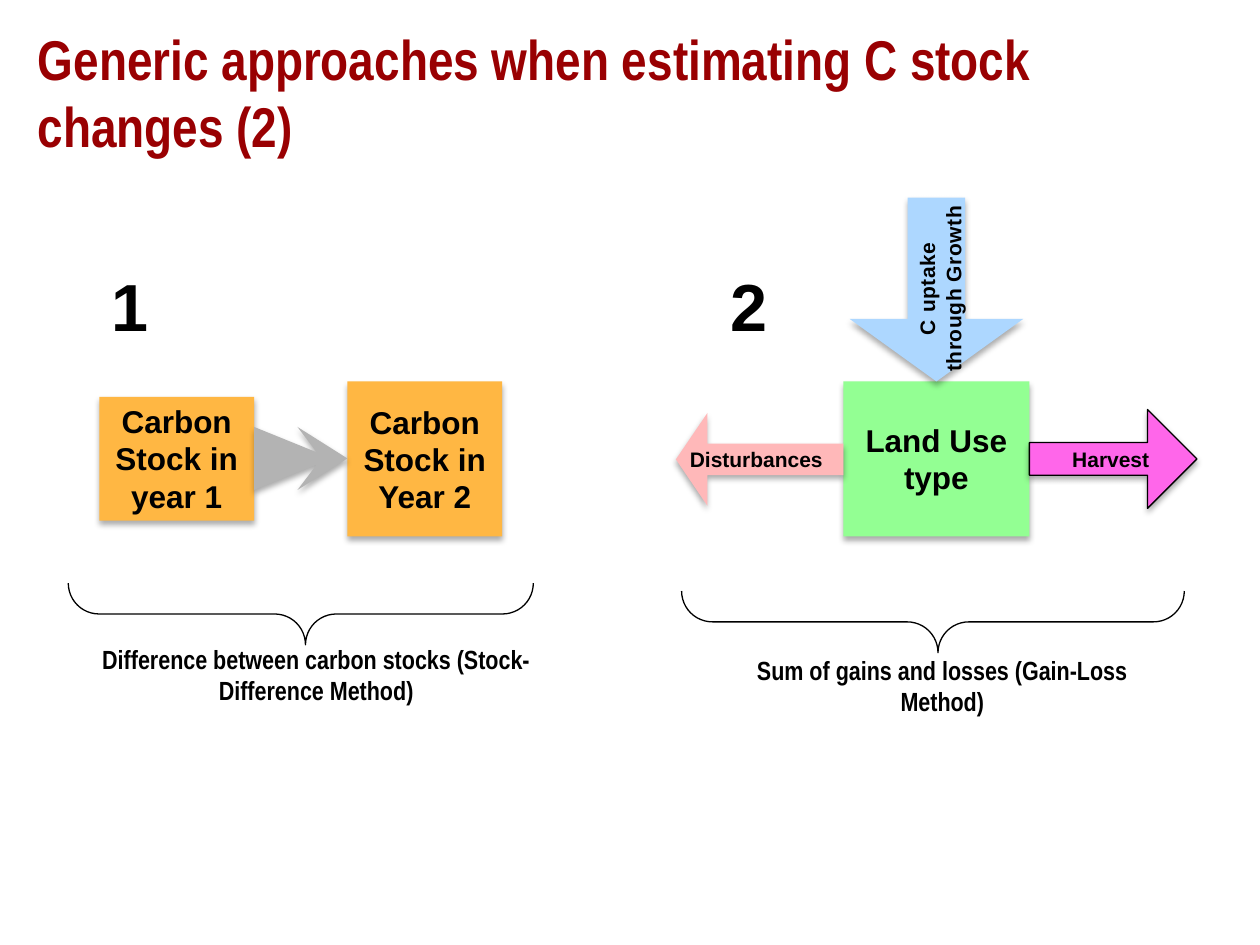
import pptx
import pptx.util
import pptx.dml.color
import pptx.enum.shapes
import pptx.enum.text
import pptx.oxml
import pptx.oxml.ns

Pt = pptx.util.Pt
RGB = pptx.dml.color.RGBColor.from_string
SHAPE = pptx.enum.shapes.MSO_SHAPE
ALIGN = pptx.enum.text.PP_ALIGN
ANCHOR = pptx.enum.text.MSO_ANCHOR
COLORS = {"title": "990002", "text": "000000", "stock": "FFB743", "change": "B3B3B3",
          "land": "93FF93", "uptake": "ADD7FF", "harvest": "FF66EA", "disturbance": "FFB8B9"}
SHADOW = (
    f'<a:effectLst {pptx.oxml.ns.nsdecls("a")}>'
    '<a:outerShdw blurRad="44450" dist="27940" dir="5400000" rotWithShape="0">'
    '<a:srgbClr val="000000"><a:alpha val="32000"/></a:srgbClr></a:outerShdw></a:effectLst>'
)


def write(sp, lines, size, align=ALIGN.CENTER, font="Arial", anchor=ANCHOR.MIDDLE, wrap=False):
    tf = sp.text_frame
    tf.word_wrap = wrap
    tf.vertical_anchor = anchor
    tf.margin_left = tf.margin_right = tf.margin_top = tf.margin_bottom = 0
    tf.text = "\n".join(lines)
    for p in tf.paragraphs:
        p.alignment = align
        p.font.name = font
        p.font.size = Pt(size)
        p.font.bold = True
        p.font.color.rgb = RGB(COLORS["text"])
    return tf


def paint(sp, color):
    sp.fill.solid()
    sp.fill.fore_color.rgb = RGB(COLORS[color])
    sp.line.fill.background()
    sp._element.spPr.append(pptx.oxml.parse_xml(SHADOW))


prs = pptx.Presentation()
prs.slide_width = Pt(720)
prs.slide_height = Pt(540)
s = prs.slides.add_slide(prs.slide_layouts[5])

title = s.shapes.title
title.left, title.top, title.width, title.height = Pt(14.4), Pt(13), Pt(692), Pt(79)
tf = title.text_frame
tf.text = "Generic approaches when estimating C stock changes (2)"
tf.auto_size = pptx.enum.text.MSO_AUTO_SIZE.NONE
tf.vertical_anchor = ANCHOR.MIDDLE
p = tf.paragraphs[0]
p.alignment = ALIGN.LEFT
p.font.name = "Arial Narrow"
p.font.size = Pt(32)
p.font.bold = True
p.font.color.rgb = RGB(COLORS["title"])

boxes = [
    (56.75, 226.75, 88.5, 70.75, "stock", ["Carbon", "Stock in", "year 1"]),
    (198.5, 218, 88.5, 88.5, "stock", ["Carbon", "Stock in", "Year 2"]),
    (482, 218, 106.25, 88.5, "land", ["Land Use", "type"]),
]
for x, y, w, h, color, lines in boxes:
    sp = s.shapes.add_shape(SHAPE.RECTANGLE, Pt(x), Pt(y), Pt(w), Pt(h))
    paint(sp, color)
    tf = write(sp, lines, 18)
    for p in tf.paragraphs:
        p.line_spacing = Pt(21.25)

arrows = [
    (SHAPE.DOWN_ARROW, 485.5, 113, 99.25, 105, "uptake", 0.33, 0.36),
    (SHAPE.RIGHT_ARROW, 588.25, 234, 95.75, 56.5, "harvest", 0.33, 0.5),
    (SHAPE.LEFT_ARROW, 386.25, 236, 95.75, 53, "disturbance", 0.34, 0.34),
]
flows = {}
for shape, x, y, w, h, color, shaft, head in arrows:
    sp = s.shapes.add_shape(shape, Pt(x), Pt(y), Pt(w), Pt(h))
    sp.adjustments[0] = shaft
    sp.adjustments[1] = head
    paint(sp, color)
    flows[color] = sp

tf = write(flows["harvest"], ["Harvest"], 12, ALIGN.LEFT)
tf.margin_left = Pt(24.5)
flows["harvest"].line.color.rgb = RGB(COLORS["text"])
flows["harvest"].line.width = Pt(0)
tf = write(flows["disturbance"], ["Disturbances"], 12, ALIGN.RIGHT)
tf.margin_right = Pt(11.75)

uptake = s.shapes.add_textbox(Pt(486.75), Pt(149), Pt(100), Pt(32))
uptake.rotation = 270
tf = write(uptake, ["C uptake", "through Growth"], 12)
for p in tf.paragraphs:
    p.line_spacing = Pt(15)
    p.runs[0].font._element.set("spc", "30")

fb = s.shapes.build_freeform(Pt(198.5), Pt(262), scale=1.0)
fb.add_line_segments([(Pt(x), Pt(y)) for x, y in [
    (170, 280), (181, 265.5), (145.25, 280), (145.25, 244), (181, 258.5), (170, 244)]])
paint(fb.convert_to_shape(), "change")

braces = [(39, 333.25, 265.75), (389.5, 337.75, 287.25)]
depth = 35.25
for x, y, span in braces:
    sp = s.shapes.add_shape(SHAPE.RIGHT_BRACE, Pt(x + (span - depth) / 2),
                            Pt(y + (depth - span) / 2), Pt(depth), Pt(span))
    sp.rotation = 90
    sp.adjustments[0] = 0.5
    sp.adjustments[1] = 0.49
    sp.shadow.inherit = False
    sp.fill.background()
    sp.line.color.rgb = RGB(COLORS["text"])
    sp.line.width = Pt(0)

labels = [
    (53, 367.5, 255.5, 36, "Difference between carbon stocks (Stock-Difference Method)",
     15, ALIGN.CENTER, "Arial Narrow"),
    (412.5, 373.75, 252, 36, "Sum of gains and losses (Gain-Loss Method)",
     15, ALIGN.CENTER, "Arial Narrow"),
    (63.5, 151.25, 40, 52, "1", 38, ALIGN.LEFT, "Arial"),
    (417.5, 151.25, 40, 52, "2", 38, ALIGN.LEFT, "Arial"),
]
for x, y, w, h, text, size, align, font in labels:
    sp = s.shapes.add_textbox(Pt(x), Pt(y), Pt(w), Pt(h))
    write(sp, [text], size, align, font, ANCHOR.TOP, True)

prs.save("out.pptx")
